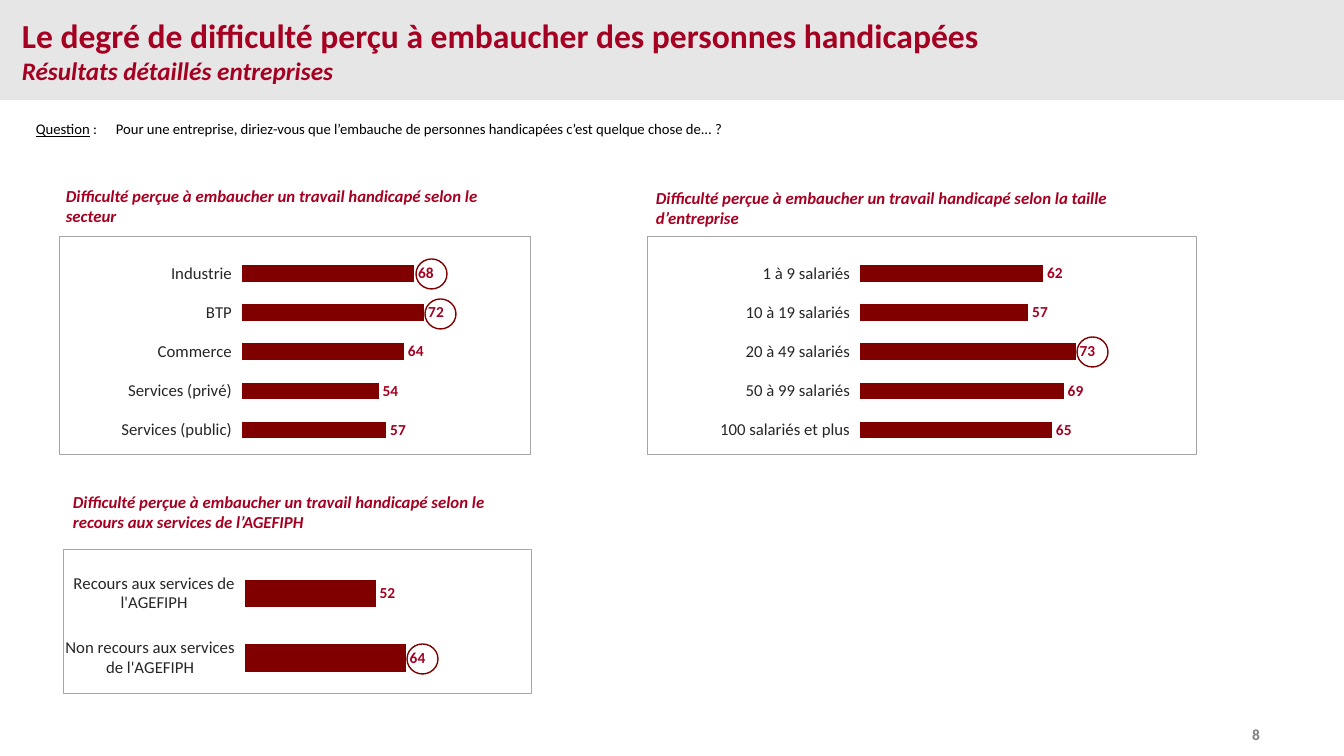
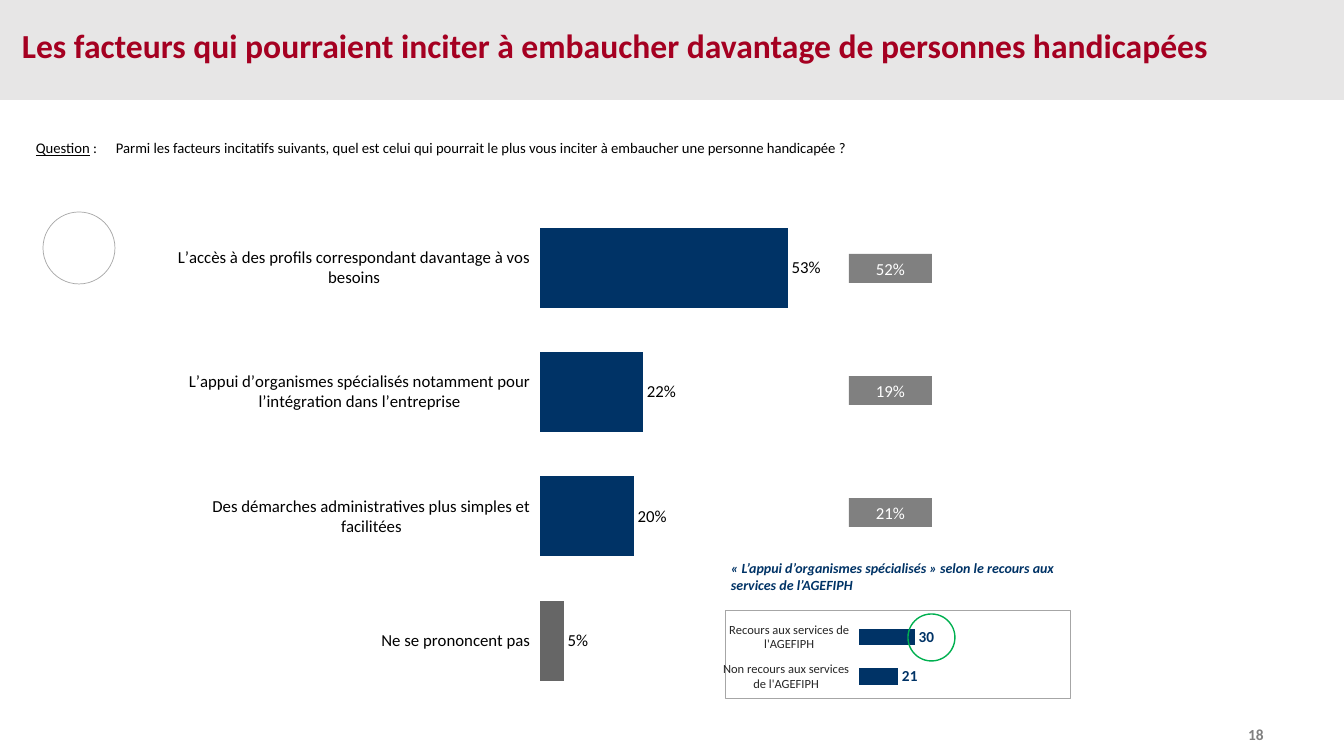
from lxml import etree
from pptx import Presentation
from pptx import util as u
from pptx.chart.data import CategoryChartData
from pptx.dml.color import RGBColor
from pptx.enum import chart as charts, shapes, text
from pptx.oxml import parse_xml
from pptx.oxml.ns import nsdecls, qn

FONT = "Calibri"
BLACK = RGBColor(0x00, 0x00, 0x00)
WHITE = RGBColor(0xFF, 0xFF, 0xFF)
BAND = RGBColor(0xE7, 0xE6, 0xE6)
GREY = RGBColor(0x80, 0x80, 0x80)
DARK_GREY = RGBColor(0x66, 0x66, 0x66)
BORDER = RGBColor(0xA6, 0xA6, 0xA6)
INK = RGBColor(0x26, 0x26, 0x26)
RED = RGBColor(0xA5, 0x00, 0x21)
MAROON = RGBColor(0x80, 0x00, 0x00)
NAVY = RGBColor(0x00, 0x33, 0x66)
GREEN = RGBColor(0x00, 0xB0, 0x50)
PANEL_PLOT = (0.387, 0.079, 0.592, 0.9)
AGEFIPH = ("Recours aux services de l'AGEFIPH", "Non recours aux services de l'AGEFIPH")


def px(n):
    return u.Emu(round(n * 914400 / 100.8))


def box(*lengths):
    return [px(n) for n in lengths]


def style(font, size, color, bold=False, italic=False):
    font.name, font.size, font.color.rgb = FONT, u.Pt(size), color
    font.bold, font.italic = bold, italic


def add_text(slide, at, lines, color, size, bold=False, italic=False, align=None, fill=None):
    sp = slide.shapes.add_textbox(*box(*at))
    tf = sp.text_frame
    tf.word_wrap = True
    tf.text = "\n".join(lines)
    for p in tf.paragraphs:
        p.alignment = align
        style(p.font, size, color, bold, italic)
    if fill is not None:
        sp.fill.solid()
        sp.fill.fore_color.rgb = fill
    return tf


def add_shape(slide, kind, at, fill=None, line=None, width=1):
    sp = slide.shapes.add_shape(kind, *box(*at))
    sp.shadow.inherit = False
    if fill is None:
        sp.fill.background()
    else:
        sp.fill.solid()
        sp.fill.fore_color.rgb = fill
    if line is None:
        sp.line.fill.background()
    else:
        sp.line.color.rgb = line
        sp.line.width = u.Pt(width)
    return sp


def add_ring(slide, at, line):
    add_shape(slide, shapes.MSO_SHAPE.OVAL, at, line=line)


def add_badge(slide, at, label):
    sp = add_shape(slide, shapes.MSO_SHAPE.RECTANGLE, at, fill=GREY)
    tf = sp.text_frame
    tf.vertical_anchor = text.MSO_ANCHOR.MIDDLE
    p = tf.paragraphs[0]
    p.text = label
    p.alignment = text.PP_ALIGN.CENTER
    style(p.font, 12, WHITE)


def add_caption(slide, at, caption, color=RED, size=12):
    add_text(slide, at, [caption], color, size, True, True, fill=WHITE)


def add_question(slide, top, question):
    tf = add_text(slide, (27, top, 965, 26), [""], BLACK, 10.5,
                  align=text.PP_ALIGN.JUSTIFY)
    tf.margin_left, tf.margin_right = px(9), px(36)
    tf.margin_top = tf.margin_bottom = px(4)
    p = tf.paragraphs[0]
    pPr = p._p.get_or_add_pPr()
    pPr.set("marL", str(px(80)))
    pPr.set("indent", str(-px(80)))
    r = p.add_run()
    r.text = "Question"
    r.font.underline = True
    p.add_run().text = " :\t" + question


def set_plot(chart, plot):
    area = chart.element.find(".//" + qn("c:plotArea"))
    for old in area.findall(qn("c:layout")):
        area.remove(old)
    layout = parse_xml(f"<c:layout {nsdecls('c')}><c:manualLayout/></c:layout>")
    settings = [("layoutTarget", "inner"), ("xMode", "edge"), ("yMode", "edge")]
    settings += zip("xywh", plot)
    for tag, value in settings:
        etree.SubElement(layout[0], qn("c:" + tag)).set("val", str(value))
    area.insert(0, layout)


def set_frame(chart):
    spPr = parse_xml(
        f'<c:spPr {nsdecls("c", "a")}>'
        f'<a:solidFill><a:srgbClr val="{WHITE}"/></a:solidFill>'
        f'<a:ln w="{u.Pt(0.75)}"><a:solidFill><a:srgbClr val="{BORDER}"/></a:solidFill></a:ln>'
        "</c:spPr>")
    chart.element.find(qn("c:chart")).addnext(spPr)


def add_bars(slide, at, cats, values, color, plot, gap, top, axis_font, label_font, fmt):
    data = CategoryChartData(number_format=fmt)
    data.categories = cats
    data.add_series("Series 1", values)
    chart = slide.shapes.add_chart(
        charts.XL_CHART_TYPE.BAR_CLUSTERED, *box(*at), data).chart
    chart.has_legend = chart.has_title = False
    style(chart.font, 12, BLACK)
    set_plot(chart, plot)

    axis = chart.category_axis
    axis.reverse_order = True
    axis.format.line.fill.background()
    style(axis.tick_labels.font, *axis_font)
    scale = chart.value_axis
    scale.visible = scale.has_major_gridlines = False
    scale.minimum_scale, scale.maximum_scale = 0, top

    bars = chart.plots[0]
    bars.gap_width = gap
    bars.vary_by_categories = False
    fill = bars.series[0].format.fill
    fill.solid()
    fill.fore_color.rgb = color
    bars.has_data_labels = True
    labels = bars.data_labels
    labels.show_value = True
    labels.number_format, labels.number_format_is_linked = fmt, False
    labels.position = charts.XL_LABEL_POSITION.OUTSIDE_END
    style(labels.font, *label_font)
    return chart


def add_panel(slide, at, cats, values, color=MAROON, label_color=RED, size=12):
    chart = add_bars(slide, at, cats, values, color, PANEL_PLOT, 138, 110,
                     (size, INK), (11, label_color, True), "General")
    set_frame(chart)


def add_slide(prs, number, title, title_top, subtitle=None):
    slide = prs.slides.add_slide(prs.slide_layouts[6])
    add_text(slide, (1216, 720, 80, 29), [number], GREY, 11, True,
             align=text.PP_ALIGN.CENTER)
    add_shape(slide, shapes.MSO_SHAPE.RECTANGLE, (0, 0, 1344, 100), fill=BAND)
    lines = [title, subtitle] if subtitle else [title]
    tf = add_text(slide, (12, title_top, 1320, 50), lines, RED, 24, True)
    if subtitle:
        style(tf.paragraphs[1].font, 18, RED, True, True)
    return slide


def build_difficulty(prs):
    slide = add_slide(prs, "8", "Le degré de difficulté perçu à embaucher des personnes handicapées",
                      10, "Résultats détaillés entreprises")
    add_question(slide, 116, "Pour une entreprise, diriez-vous que l’embauche de personnes "
                             "handicapées c’est quelque chose de... ?")
    intro = "Difficulté perçue à embaucher un travail handicapé selon "
    panels = [
        ((56, 181, 440, 50), "le secteur", (59, 236, 472, 219),
         ("Industrie", "BTP", "Commerce", "Services (privé)", "Services (public)"),
         (68, 72, 64, 54, 57)),
        ((646, 183, 490, 50), "la taille d’entreprise", (647, 236, 550, 219),
         ("1 à 9 salariés", "10 à 19 salariés", "20 à 49 salariés", "50 à 99 salariés",
          "100 salariés et plus"),
         (62, 57, 73, 69, 65)),
        ((63, 487, 469, 50), "le recours aux services de l’AGEFIPH", (63, 549, 469, 145),
         AGEFIPH, (52, 64)),
    ]
    for caption_at, criterion, chart_at, cats, values in panels:
        add_panel(slide, chart_at, cats, values)
        add_caption(slide, caption_at, intro + criterion)
    for left, top in ((425, 299), (416, 259), (407, 644), (1077, 337)):
        add_ring(slide, (left, top, 31, 30), MAROON)


def build_incentives(prs):
    slide = add_slide(prs, "18", "Les facteurs qui pourraient inciter à embaucher davantage "
                                 "de personnes handicapées", 20)
    add_question(slide, 135, "Parmi les facteurs incitatifs suivants, quel est celui qui pourrait "
                             "le plus vous inciter à embaucher une personne handicapée ?")
    cats = ("L’accès à des profils correspondant davantage à vos besoins",
            "L’appui d’organismes spécialisés notamment pour l’intégration dans l’entreprise",
            "Des démarches administratives plus simples et facilitées",
            "Ne se prononcent pas")
    chart = add_bars(slide, (172, 205, 837, 498), cats, (0.53, 0.22, 0.2, 0.05), NAVY,
                     (0.44, 0.001, 0.558, 0.999), 55, 1, (12, BLACK), (12, BLACK), "0%")
    no_answer = chart.plots[0].series[0].points[3].format.fill
    no_answer.solid()
    no_answer.fore_color.rgb = DARK_GREY
    add_shape(slide, shapes.MSO_SHAPE.OVAL, (43, 212, 72, 72), WHITE, BORDER, 0.5)
    add_panel(slide, (723, 610, 348, 89), AGEFIPH, (30, 21), NAVY, NAVY, 9)
    add_caption(slide, (721, 555, 350, 44),
                "«\u00a0L’appui d’organismes spécialisés\u00a0» selon le recours aux services de l’AGEFIPH",
                NAVY, 10)
    for i, share in enumerate(("52%", "19%", "21%")):
        add_badge(slide, (849, 254 + 122 * i, 83, 29), share)
    add_ring(slide, (908, 614, 47, 47), GREEN)


def main():
    prs = Presentation()
    prs.slide_width, prs.slide_height = box(1344, 756)
    build_difficulty(prs)
    build_incentives(prs)
    prs.save("out.pptx")


if __name__ == "__main__":
    main()
